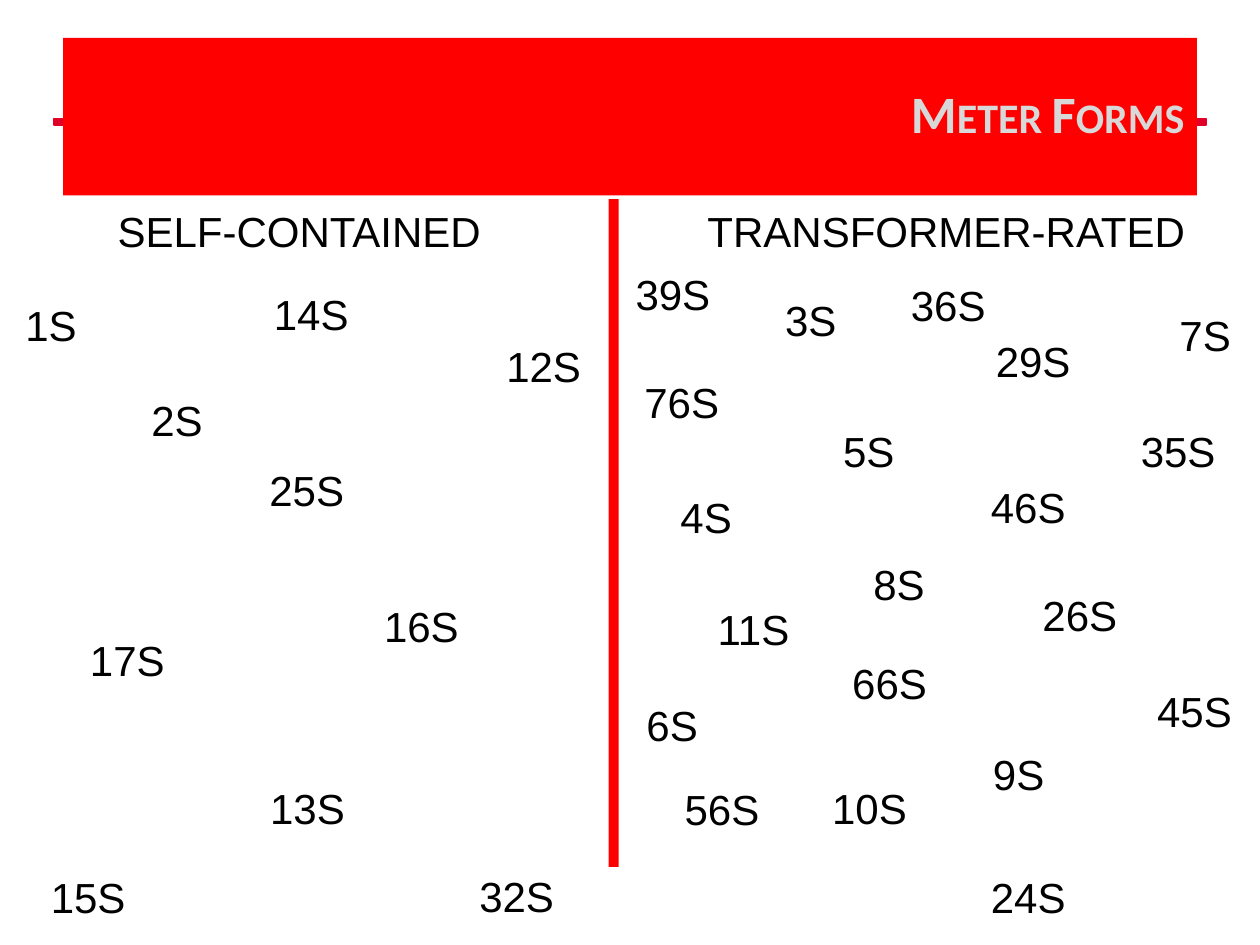
"""Build the Meter Forms slide: self-contained and transformer-rated form numbers."""
from pptx import Presentation
from pptx import util as u
from pptx.dml.color import RGBColor
from pptx.enum import shapes, text

PX = 9144
COLORS = {"red": "FF0000", "rule": "E10027", "title": "D8D8D8", "ink": "000000"}

TITLE = "Meter Forms"
HEADINGS = [("SELF-CONTAINED", 0, 158, 475), ("TRANSFORMER-RATED", 502, 158, 498)]
SELF_CONTAINED = [
    ("1S", 7, 233, 67), ("2S", 107, 308, 67), ("12S", 388, 265, 87),
    ("13S", 198, 616, 92), ("14S", 201, 224, 92), ("15S", 20, 687, 100),
    ("16S", 293, 472, 83), ("17S", 55, 499, 92), ("25S", 202, 364, 83),
    ("32S", 364, 686, 92),
]
TRANSFORMER_RATED = [
    ("3S", 610, 229, 67), ("4S", 527, 385, 67), ("5S", 656, 333, 67),
    ("6S", 500, 550, 67), ("7S", 923, 241, 67), ("8S", 680, 438, 67),
    ("9S", 775, 589, 67), ("10S", 644, 616, 92), ("11S", 552, 474, 92),
    ("24S", 770, 687, 92), ("26S", 811, 463, 92), ("29S", 778, 261, 84),
    ("35S", 889, 333, 92), ("36S", 708, 217, 89), ("39S", 488, 208, 92),
    ("45S", 902, 539, 92), ("46S", 770, 377, 92), ("56S", 527, 617, 92),
    ("66S", 660, 517, 92), ("76S", 495, 294, 92),
]


def px(*lengths):
    return [u.Emu(length * PX) for length in lengths]


def color(name):
    return RGBColor.from_string(COLORS[name])


def write(frame, wording, size=24, face="Arial", ink="ink", bold=False,
          align=text.PP_ALIGN.CENTER, anchor=text.MSO_ANCHOR.TOP):
    frame.word_wrap = True
    frame.vertical_anchor = anchor
    paragraph = frame.paragraphs[0]
    paragraph.alignment = align
    run = paragraph.add_run()
    run.text = wording
    run.font.size, run.font.name, run.font.bold = u.Pt(size), face, bold
    run.font.color.rgb = color(ink)
    return paragraph


def add_bar(slide, box, fill, outlined=False):
    bar = slide.shapes.add_shape(shapes.MSO_SHAPE.RECTANGLE, *px(*box))
    bar.shadow.inherit = False
    bar.fill.solid()
    bar.fill.fore_color.rgb = color(fill)
    if outlined:
        bar.line.color.rgb = color(fill)
        bar.line.width = u.Pt(1)
    else:
        bar.line.fill.background()


def add_label(slide, wording, left, top, width, height):
    label = slide.shapes.add_textbox(*px(left, top, width, height))
    write(label.text_frame, wording)
    label.text_frame.auto_size = text.MSO_AUTO_SIZE.SHAPE_TO_FIT_TEXT


def format_title(slide):
    title = slide.shapes.title
    title.left, title.top, title.width, title.height = px(50, 30, 900, 125)
    title.fill.solid()
    title.fill.fore_color.rgb = color("red")
    title.text_frame.auto_size = text.MSO_AUTO_SIZE.NONE
    paragraph = write(title.text_frame, TITLE, size=30, face="Calibri", ink="title", bold=True,
                      align=text.PP_ALIGN.RIGHT, anchor=text.MSO_ANCHOR.MIDDLE)
    paragraph.line_spacing = 0.9
    paragraph.runs[0].font._element.set("cap", "small")
    slide.shapes._spTree.append(title._element)


def main():
    deck = Presentation()
    deck.slide_width, deck.slide_height = px(1000, 750)
    slide = deck.slides.add_slide(deck.slide_layouts[5])
    add_bar(slide, (43, 94, 914, 5), "rule", outlined=True)
    format_title(slide)
    add_bar(slide, (483, 158, 8, 530), "red")
    for heading in HEADINGS:
        add_label(slide, *heading, height=50)
    for form in SELF_CONTAINED + TRANSFORMER_RATED:
        add_label(slide, *form, height=51)
    deck.save("out.pptx")


if __name__ == "__main__":
    main()
